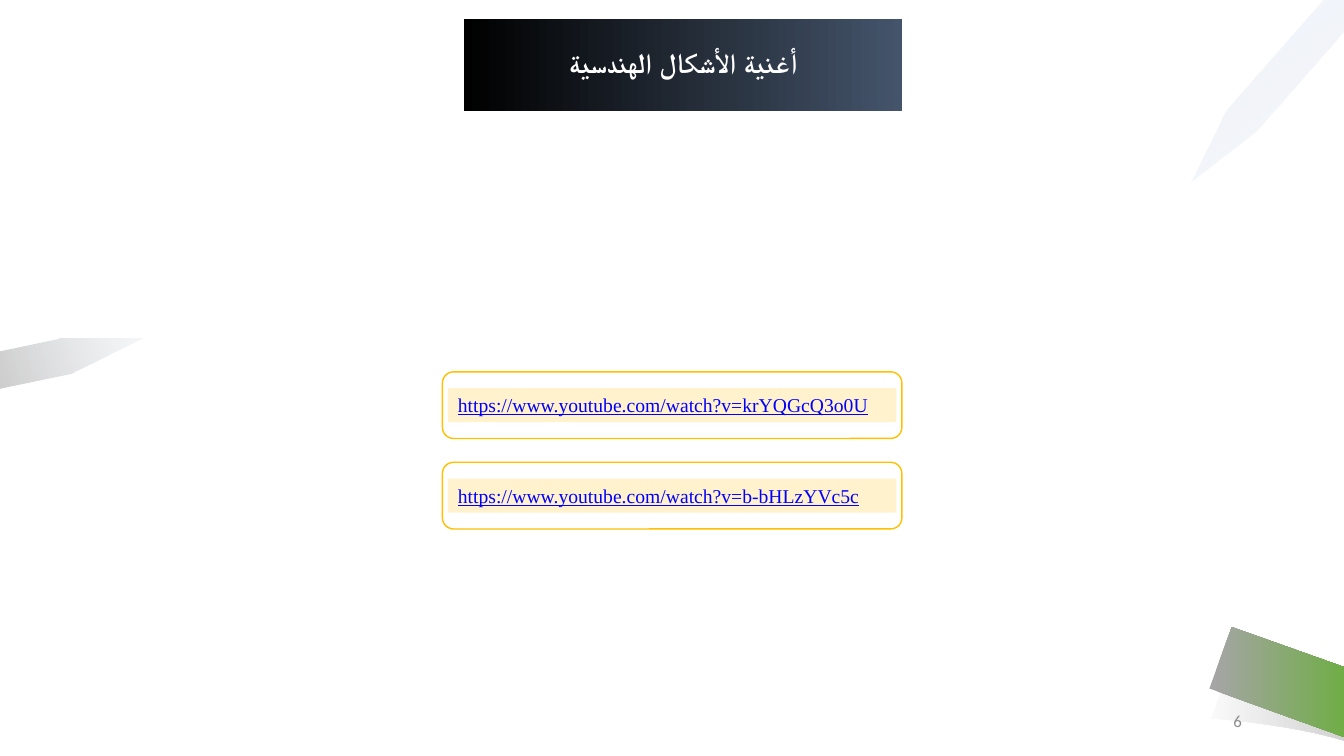
from dataclasses import dataclass

from lxml import etree
from pptx import Presentation
from pptx import util as u
from pptx.dml.color import RGBColor
from pptx.enum import shapes, text
from pptx.oxml.ns import qn


@dataclass(frozen=True)
class Theme:
    white: str = "FFFFFF"
    black: str = "000000"
    slate: str = "44546A"
    blue: str = "4472C4"
    mist: str = "E7E6E6"
    grey: str = "A5A5A5"
    green: str = "70AD47"
    amber: str = "FFC000"
    cream: str = "FFF2CC"
    link: str = "0000FF"
    number: str = "8C8C8C"
    sans: str = "Calibri"
    serif: str = "Times New Roman"
    title_size: int = 20
    link_size: int = 14
    number_size: int = 12


def curve(start, control_1, control_2, end, steps=12):
    """Points along a cubic curve, both ends included."""
    points = []
    for step in range(steps + 1):
        t = step / steps
        weights = ((1 - t) ** 3, 3 * t * (1 - t) ** 2, 3 * t ** 2 * (1 - t), t ** 3)
        corners = (start, control_1, control_2, end)
        points.append(tuple(sum(w * c[axis] for w, c in zip(weights, corners))
                            for axis in (0, 1)))
    return points


class SlideBuilder:
    def __init__(self, slide, theme):
        self.slide = slide
        self.theme = theme

    def gradient(self, shape, stops, angle):
        """Stops are (position %, colour, opacity %); angle runs clockwise."""
        shape.fill.gradient()
        shape.fill.gradient_angle = (360 - angle) % 360
        for stop, (position, color, _) in zip(shape.fill.gradient_stops, stops):
            stop.position = position / 100
            stop.color.rgb = RGBColor.from_string(color)
        colors = shape.element.spPr.findall(".//" + qn("a:gs") + "/" + qn("a:srgbClr"))
        for color, (_, _, opacity) in zip(colors, stops):
            if opacity < 100:
                etree.SubElement(color, qn("a:alpha")).set("val", str(opacity * 1000))

    def ribbon(self, points, stops, angle):
        corners = [(u.Cm(x), u.Cm(y)) for x, y in points]
        outline = self.slide.shapes.build_freeform(*corners[0])
        outline.add_line_segments(corners[1:], close=True)
        shape = outline.convert_to_shape()
        shape.shadow.inherit = False
        shape.line.fill.background()
        self.gradient(shape, stops, angle)

    def set_words(self, shape, words, font, size, color, align, bold=None, underline=None):
        frame = shape.text_frame
        frame.text = words
        frame.word_wrap = True
        paragraph = frame.paragraphs[0]
        paragraph.alignment = align
        style = paragraph.runs[0].font
        style.name, style.size = font, u.Pt(size)
        style.color.rgb = RGBColor.from_string(color)
        style.bold, style.underline = bold, underline
        return frame

    def title(self, words, left, top, width, height):
        title = self.slide.shapes.title
        title.left, title.top = u.Cm(left), u.Cm(top)
        title.width, title.height = u.Cm(width), u.Cm(height)
        self.gradient(title, [(0, self.theme.slate, 100), (100, self.theme.black, 100)], 180)
        frame = self.set_words(title, words, self.theme.sans, self.theme.title_size,
                               self.theme.white, text.PP_ALIGN.CENTER, bold=True)
        frame.auto_size = text.MSO_AUTO_SIZE.NONE
        frame.vertical_anchor = text.MSO_ANCHOR.MIDDLE
        frame.margin_left = u.Cm(0.4)
        frame.paragraphs[0].line_spacing = 0.9

    def box(self, kind, left, top, width, height, fill, line=None):
        shape = self.slide.shapes.add_shape(kind, u.Cm(left), u.Cm(top), u.Cm(width), u.Cm(height))
        shape.shadow.inherit = False
        shape.fill.solid()
        shape.fill.fore_color.rgb = RGBColor.from_string(fill)
        if line:
            shape.line.color.rgb = RGBColor.from_string(line)
            shape.line.width = u.Pt(1)
        else:
            shape.line.fill.background()
        return shape

    def link_card(self, address, left, top):
        theme = self.theme
        self.box(shapes.MSO_SHAPE.ROUNDED_RECTANGLE, left, top, 11.58, 1.68,
                 theme.white, theme.amber)
        label = self.box(shapes.MSO_SHAPE.RECTANGLE, left + 0.14, top + 0.41, 11.3, 0.86,
                         theme.cream)
        frame = self.set_words(label, address, theme.serif, theme.link_size, theme.link,
                               text.PP_ALIGN.LEFT, underline=True)
        frame.vertical_anchor = text.MSO_ANCHOR.TOP
        frame.auto_size = text.MSO_AUTO_SIZE.SHAPE_TO_FIT_TEXT

    def page_number(self, number, left, top, width, height):
        box = self.slide.shapes.add_textbox(u.Cm(left), u.Cm(top), u.Cm(width), u.Cm(height))
        frame = self.set_words(box, number, self.theme.sans, self.theme.number_size,
                               self.theme.number, text.PP_ALIGN.RIGHT)
        frame.vertical_anchor = text.MSO_ANCHOR.MIDDLE


def main():
    deck = Presentation()
    deck.slide_width, deck.slide_height = u.Cm(33.87), u.Cm(19.05)
    theme = Theme()
    builder = SlideBuilder(deck.slides.add_slide(deck.slide_layouts[5]), theme)

    # Corner ribbon with its soft shade
    shade = (curve((30.53, 18.11), (30.53, 18.11), (32.46, 18.24), (33.87, 18.67))
             + curve((33.87, 16.97), (32.31, 16.54), (31.09, 16.56), (31.09, 16.56)))
    builder.ribbon(shade, [(3, theme.grey, 6), (100, theme.grey, 50)], 0)
    builder.ribbon([(33.87, 16.81), (31.04, 15.8), (30.48, 17.35), (33.87, 18.57)],
                   [(3, theme.grey, 100), (100, theme.green, 100)], 0)

    # Pale pencils at the left and top right edges
    builder.ribbon([(3.58, 8.53), (1.5, 8.53), (0, 8.85), (0, 9.8), (1.8, 9.42)],
                   [(0, theme.slate, 5), (100, theme.black, 20)], 164)
    builder.ribbon([(33.34, 0), (30.91, 2.77), (30.03, 4.57), (31.67, 3.3), (33.87, 0.79),
                    (33.87, 0)],
                   [(0, theme.blue, 5), (100, theme.mist, 20)], 53)

    # Title and page number
    builder.title("أغنية الأشكال الهندسية ", 11.7, 0.48, 11.03, 2.31)
    builder.page_number("6", 23.93, 17.65, 7.62, 1.02)

    # Song links
    songs = ["https://www.youtube.com/watch?v=krYQGcQ3o0U",
             "https://www.youtube.com/watch?v=b-bHLzYVc5c"]
    for row, address in enumerate(songs):
        builder.link_card(address, 11.15, 9.37 + row * 2.28)

    deck.save("out.pptx")


if __name__ == "__main__":
    main()
